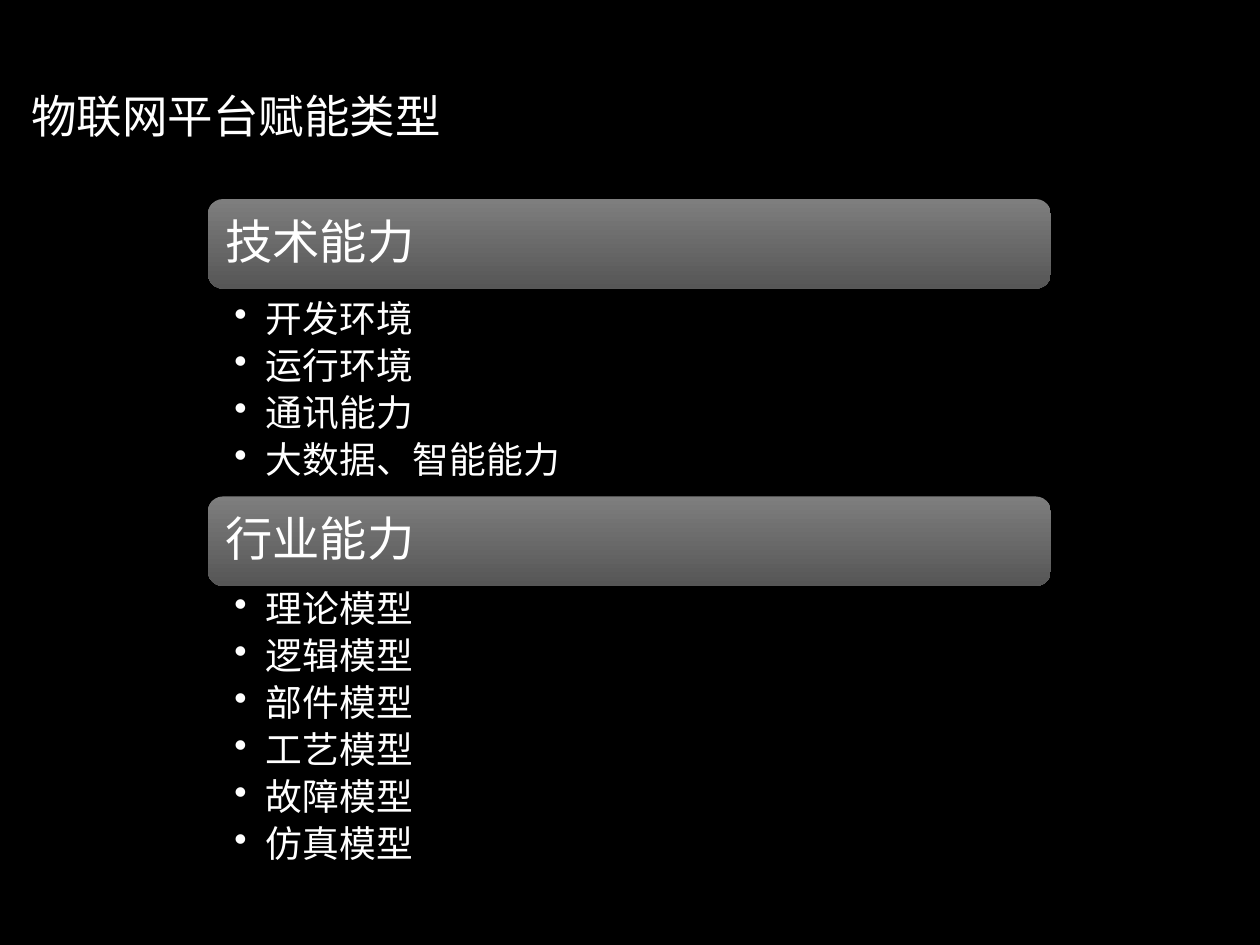
from lxml import etree
from pptx import Presentation
from pptx.dml.color import RGBColor
from pptx.enum.shapes import MSO_SHAPE as SHAPE
from pptx.enum.text import MSO_ANCHOR as ANCHOR
from pptx.oxml.ns import qn
from pptx.util import Inches, Pt


def rgb(value):
    return RGBColor.from_string(value)


class Deck:
    background = "000000"
    text_color = "FFFFFF"
    bar_colors = ("7E7E7E", "565656")
    title_font = "Noto Sans CJK SC"
    body_font = "League Spartan"

    def __init__(self, prs):
        self.s = prs.slides.add_slide(prs.slide_layouts[6])
        fill = self.s.background.fill
        fill.solid()
        fill.fore_color.rgb = rgb(self.background)

    def text(self, box, lines, size, font, inset=(0.1, 0.05), anchor=ANCHOR.TOP):
        tf = self.s.shapes.add_textbox(*map(Inches, box)).text_frame
        tf.word_wrap = True
        tf.vertical_anchor = anchor
        tf.margin_left = tf.margin_right = Inches(inset[0])
        tf.margin_top = tf.margin_bottom = Inches(inset[1])
        tf.text = "\n".join(lines)
        for p in tf.paragraphs:
            p.font.size = Pt(size)
            p.font.name = font
            p.font.color.rgb = rgb(self.text_color)
            for r in p.runs:
                r.font.name = font
                ea = etree.SubElement(r.font._element, qn("a:ea"))
                ea.set("typeface", font)
        return tf

    def title(self, box, text):
        self.text(box, [text], 26, self.title_font, anchor=ANCHOR.MIDDLE)

    def bar(self, left, top, width, height, text):
        sp = self.s.shapes.add_shape(
            SHAPE.ROUNDED_RECTANGLE, *map(Inches, (left, top, width, height)))
        sp.shadow.inherit = False
        sp.line.fill.background()
        sp.fill.gradient()
        sp.fill.gradient_angle = 270
        for stop, position, color in zip(sp.fill.gradient_stops, (0, 1), self.bar_colors):
            stop.position = position
            stop.color.rgb = rgb(color)
        pad = 0.03
        box = (left + pad, top + pad, width - 2 * pad, height - 2 * pad)
        tf = self.text(box, [text], 27, self.body_font, (0.11, 0.11), ANCHOR.MIDDLE)
        tf.paragraphs[0].line_spacing = 0.9

    def bullets(self, box, lines):
        size = 21
        tf = self.text(box, lines, size, self.body_font, (0.21, 0.04))
        for p in tf.paragraphs:
            p.level = 1
            p.line_spacing = 0.9
            p.space_after = Pt(size * 0.2)
            props = p._p.get_or_add_pPr()
            props.set("marL", str(Inches(0.25)))
            props.set("indent", str(Inches(-0.25)))
            bullet = etree.Element(qn("a:buChar"), char="•")
            props.find(qn("a:spcAft")).addnext(bullet)


def main():
    prs = Presentation()
    prs.slide_width, prs.slide_height = Inches(10), Inches(7.5)
    deck = Deck(prs)
    deck.title((0.15, 0.47, 9.67, 0.89), "物联网平台赋能类型")

    left, width, bar_height = 1.65, 6.69, 0.71
    sections = [
        (1.58, "技术能力", 2.35, 1.59,
         ["开发环境", "运行环境", "通讯能力", "大数据、智能能力"]),
        (3.94, "行业能力", 4.65, 2.38,
         ["理论模型", "逻辑模型", "部件模型", "工艺模型", "故障模型", "仿真模型"]),
    ]
    for bar_top, heading, list_top, list_height, items in sections:
        deck.bar(left, bar_top, width, bar_height, heading)
        deck.bullets((left, list_top, width, list_height), items)

    prs.save("out.pptx")


if __name__ == "__main__":
    main()
